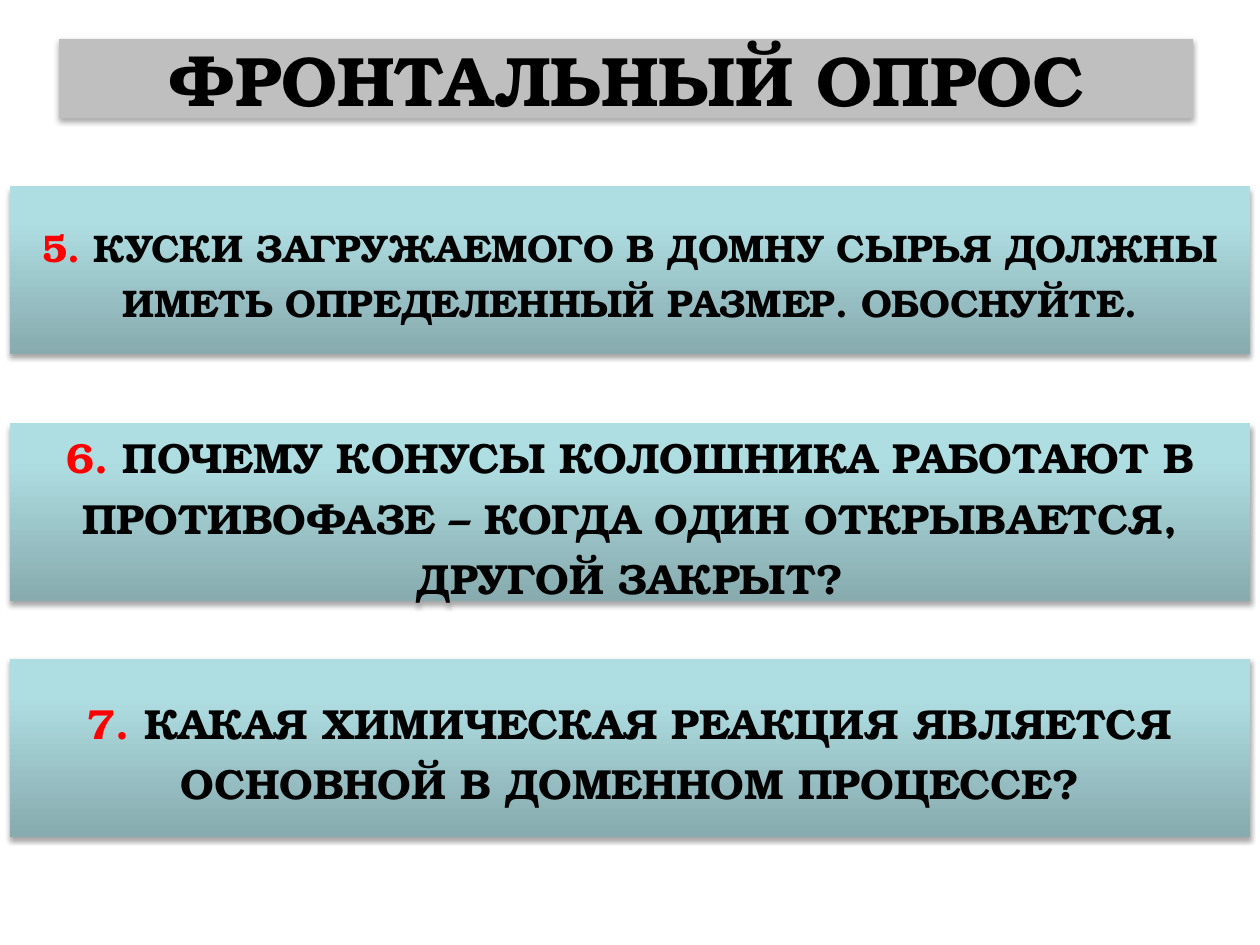
from copy import deepcopy
from dataclasses import dataclass

from lxml.etree import SubElement
from pptx import Presentation
from pptx.dml.color import RGBColor
from pptx.enum.shapes import MSO_SHAPE
from pptx.enum.text import MSO_ANCHOR, MSO_AUTO_SIZE, PP_ALIGN
from pptx.oxml.ns import qn
from pptx.util import Inches, Pt

FONT = "TeX Gyre Bonum"
BLACK = RGBColor(0x00, 0x00, 0x00)
RED = RGBColor(0xFF, 0x00, 0x00)
GREY = RGBColor(0xBF, 0xBF, 0xBF)
TEAL_STOPS = (
    (0, RGBColor(0x87, 0xAB, 0xAE)),
    (0.8, RGBColor(0xAF, 0xDE, 0xE2)),
    (1, RGBColor(0xAF, 0xE0, 0xE4)),
)


@dataclass
class Question:
    number: str
    text: str
    top: float
    height: float
    size: int


QUESTIONS = [
    Question("5.", " КУСКИ ЗАГРУЖАЕМОГО В ДОМНУ СЫРЬЯ ДОЛЖНЫ ИМЕТЬ "
             "ОПРЕДЕЛЕННЫЙ РАЗМЕР. ОБОСНУЙТЕ.", 1.48, 1.33, 22),
    Question("6.", " ПОЧЕМУ КОНУСЫ КОЛОШНИКА РАБОТАЮТ В ПРОТИВОФАЗЕ – "
             "КОГДА ОДИН ОТКРЫВАЕТСЯ, ДРУГОЙ ЗАКРЫТ?", 3.36, 1.41, 24),
    Question("7.", " КАКАЯ ХИМИЧЕСКАЯ РЕАКЦИЯ ЯВЛЯЕТСЯ ОСНОВНОЙ В "
             "ДОМЕННОМ ПРОЦЕССЕ?", 5.23, 1.41, 24),
]


def add_black(parent, alpha: int = 100) -> None:
    color = SubElement(parent, qn("a:srgbClr"), val=str(BLACK))
    if alpha < 100:
        SubElement(color, qn("a:alpha"), val=str(alpha * 1000))


def add_shadow(box) -> None:
    box.shadow.inherit = False
    effects = box._element.spPr.find(qn("a:effectLst"))
    shadow = SubElement(effects, qn("a:outerShdw"), blurRad=str(Pt(3.1)),
                        dist=str(Pt(1.8)), dir="5400000", rotWithShape="0")
    add_black(shadow, 35)


def fill_gradient(box) -> None:
    box.fill.gradient()
    box.fill.gradient_angle = 90
    stop_list = box._element.spPr.find(".//" + qn("a:gsLst"))
    stop_list.append(deepcopy(stop_list[-1]))
    for stop, (position, color) in zip(box.fill.gradient_stops, TEAL_STOPS):
        stop.position = position
        stop.color.rgb = color


def format_span(span, size: int, color: RGBColor) -> None:
    span.font.name = FONT
    span.font.size = Pt(size)
    span.font.bold = True
    span.font.color.rgb = color
    # Thin black outline around the letters; it must precede the fill
    properties = span._r.get_or_add_rPr()
    line = SubElement(properties, qn("a:ln"), w=str(Pt(0.71)))
    properties.insert(0, line)
    add_black(SubElement(line, qn("a:solidFill")))


def center_text(box) -> None:
    frame = box.text_frame
    frame.word_wrap = True
    frame.auto_size = MSO_AUTO_SIZE.NONE
    frame.vertical_anchor = MSO_ANCHOR.MIDDLE
    frame.paragraphs[0].alignment = PP_ALIGN.CENTER


def add_title(page, text: str) -> None:
    title = page.shapes.title
    title.left, title.top = Inches(0.47), Inches(0.31)
    title.width, title.height = Inches(9), Inches(0.63)
    title.fill.solid()
    title.fill.fore_color.rgb = GREY
    add_shadow(title)
    title.text_frame.text = text
    center_text(title)
    format_span(title.text_frame.paragraphs[0].runs[0], 40, BLACK)


def add_question(page, question: Question) -> None:
    box = page.shapes.add_shape(
        MSO_SHAPE.RECTANGLE, Inches(0.08), Inches(question.top),
        Inches(9.84), Inches(question.height))
    fill_gradient(box)
    box.line.fill.background()
    add_shadow(box)
    center_text(box)
    para = box.text_frame.paragraphs[0]
    para.line_spacing = 1.2
    for text, color in ((question.number, RED), (question.text, BLACK)):
        span = para.add_run()
        span.text = text
        format_span(span, question.size, color)


def main() -> None:
    deck = Presentation()
    deck.slide_width, deck.slide_height = Inches(10), Inches(7.5)
    page = deck.slides.add_slide(deck.slide_layouts.get_by_name("Title Only"))

    add_title(page, "ФРОНТАЛЬНЫЙ ОПРОС")
    for question in QUESTIONS:
        add_question(page, question)

    deck.save("out.pptx")


if __name__ == "__main__":
    main()
